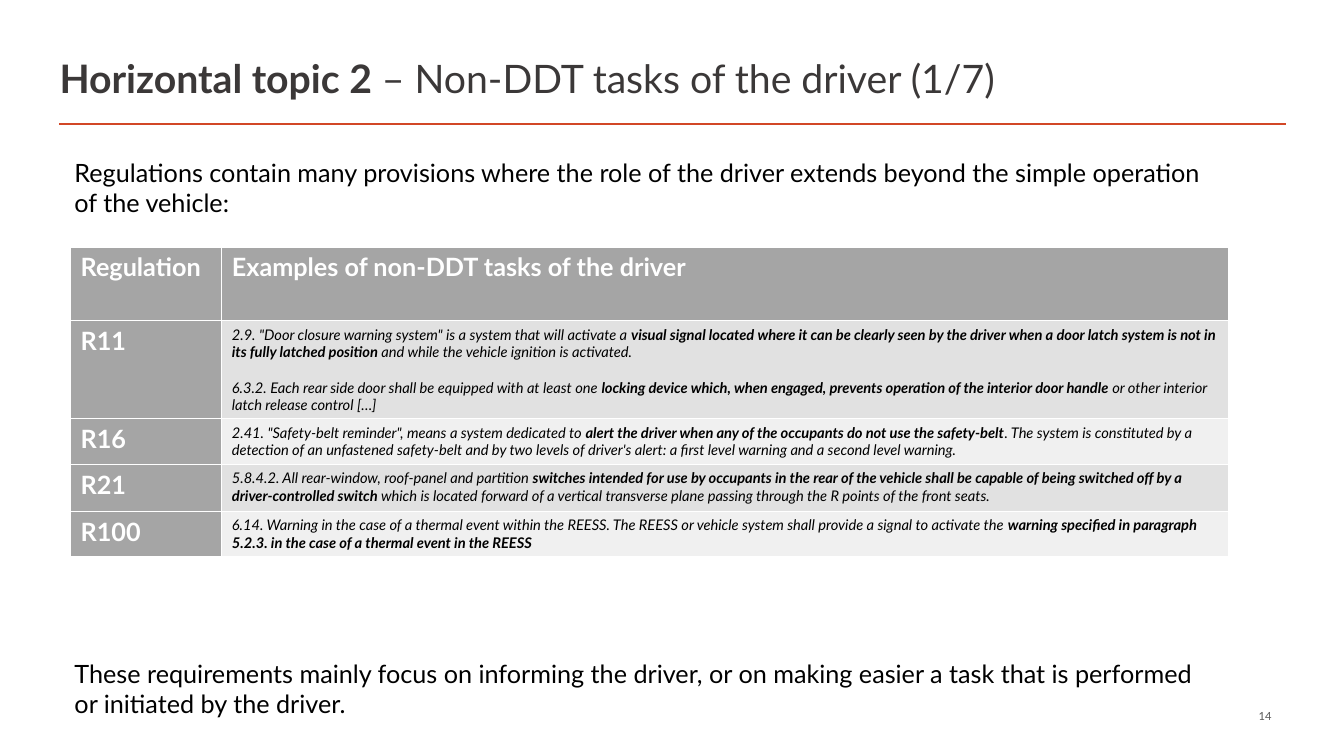
from pptx import Presentation
from pptx.dml.color import RGBColor
from pptx.enum.shapes import MSO_CONNECTOR
from pptx.enum.text import MSO_ANCHOR, MSO_AUTO_SIZE, PP_ALIGN
from pptx.oxml.ns import qn
from pptx.util import Inches, Pt
from lxml import etree


def rgb(value):
    return RGBColor.from_string(value)


def write(p, text, size, color, bold=False, italic=False):
    p.font.name = "Lato"
    p.font.size = Pt(size)
    p.font.color.rgb = rgb(color)
    p.font.italic = italic
    for i, part in enumerate(text.split("*")):
        if part:
            r = p.add_run()
            r.text = part
            r.font.bold = bold or i % 2 == 1


TITLE = "*Horizontal topic 2* – Non-DDT tasks of the driver (1/7)"
NOTES = [
    (1.51, 11.61, "Regulations contain many provisions where the role of the driver "
     "extends beyond the simple operation of the vehicle:"),
    (6.48, 11.49, "These requirements mainly focus on informing the driver, or on making "
     "easier a task that is performed or initiated by the driver."),
]
HEADER = ["Regulation", "Examples of non-DDT tasks of the driver"]
REGULATIONS = [
    ("R11", 0.97, [
        '2.9. "Door closure warning system" is a system that will activate a *visual signal '
        "located where it can be clearly seen by the driver when a door latch system is not "
        "in its fully latched position *and while the vehicle ignition is activated.",
        "6.3.2. Each rear side door shall be equipped with at least one *locking device "
        "which, when engaged, prevents operation of the interior door handle *or other "
        "interior latch release control […]"]),
    ("R16", 0.45, [
        '2.41. "Safety-belt reminder", means a system dedicated to *alert the driver when '
        "any of the occupants do not use the safety-belt*. The system is constituted by a "
        "detection of an unfastened safety-belt and by two levels of driver's alert: a first "
        "level warning and a second level warning."]),
    ("R21", 0.47, [
        "5.8.4.2. All rear-window, roof-panel and partition *switches intended for use by "
        "occupants in the rear of the vehicle shall be capable of being switched off by a "
        "driver-controlled switch *which is located forward of a vertical transverse plane "
        "passing through the R points of the front seats."]),
    ("R100", 0.45, [
        "6.14. Warning in the case of a thermal event within the REESS. The REESS or vehicle "
        "system shall provide a signal to activate the *warning specified in paragraph "
        "5.2.3. in the case of a thermal event in the REESS*"]),
]
BANDS = ["E1E1E1", "F0F0F0"]

prs = Presentation()
prs.slide_width, prs.slide_height = Inches(13.33), Inches(7.5)
s = prs.slides.add_slide(prs.slide_layouts[5])

title = s.shapes.title
title.left, title.top, title.width, title.height = map(Inches, (0.49, 0.47, 12.26, 0.61))
tf = title.text_frame
tf.auto_size = MSO_AUTO_SIZE.NONE
tf.vertical_anchor = MSO_ANCHOR.MIDDLE
p = tf.paragraphs[0]
p.alignment = PP_ALIGN.LEFT
write(p, TITLE, 28, "3B3838")

rule = s.shapes.add_connector(MSO_CONNECTOR.STRAIGHT, Inches(0.59), Inches(1.23),
                              Inches(12.75), Inches(1.23))
rule.line.color.rgb = rgb("D24726")
rule.line.width = Pt(2)
etree.SubElement(rule._element.spPr, qn("a:effectLst"))

for top, width, text in NOTES:
    tf = s.shapes.add_textbox(Inches(0.64), Inches(top), Inches(width), Inches(0.71)).text_frame
    tf.word_wrap = True
    write(tf.paragraphs[0], text, 18, "000000")

heights = [0.73] + [height for _, height, _ in REGULATIONS]
table = s.shapes.add_table(len(heights), 2, Inches(0.7), Inches(2.45),
                           Inches(11.49), Inches(sum(heights))).table
table.first_col = True
for column, width in zip(table.columns, (1.5, 9.99)):
    column.width = Inches(width)
for row, height in zip(table.rows, heights):
    row.height = Inches(height)

labels = [(0, c, text) for c, text in enumerate(HEADER)]
labels += [(i, 0, name) for i, (name, _, _) in enumerate(REGULATIONS, 1)]
for row, column, text in labels:
    cell = table.cell(row, column)
    cell.fill.solid()
    cell.fill.fore_color.rgb = rgb("A5A5A5")
    write(cell.text_frame.paragraphs[0], text, 18, "FFFFFF", bold=True)

for i, (_, _, clauses) in enumerate(REGULATIONS):
    cell = table.cell(i + 1, 1)
    cell.fill.solid()
    cell.fill.fore_color.rgb = rgb(BANDS[i % 2])
    tf = cell.text_frame
    for n, clause in enumerate(clauses):
        p = tf.add_paragraph() if n else tf.paragraphs[0]
        p.space_before = Pt(12.6 if n else 0)
        write(p, clause, 10.5, "000000", italic=True)

tf = s.shapes.add_textbox(Inches(9.13), Inches(7.03), Inches(3.58), Inches(0.15)).text_frame
tf.margin_top = tf.margin_bottom = 0
tf.vertical_anchor = MSO_ANCHOR.MIDDLE
tf.word_wrap = True
tf.paragraphs[0].alignment = PP_ALIGN.RIGHT
write(tf.paragraphs[0], "14", 8, "595959")

prs.save("out.pptx")
